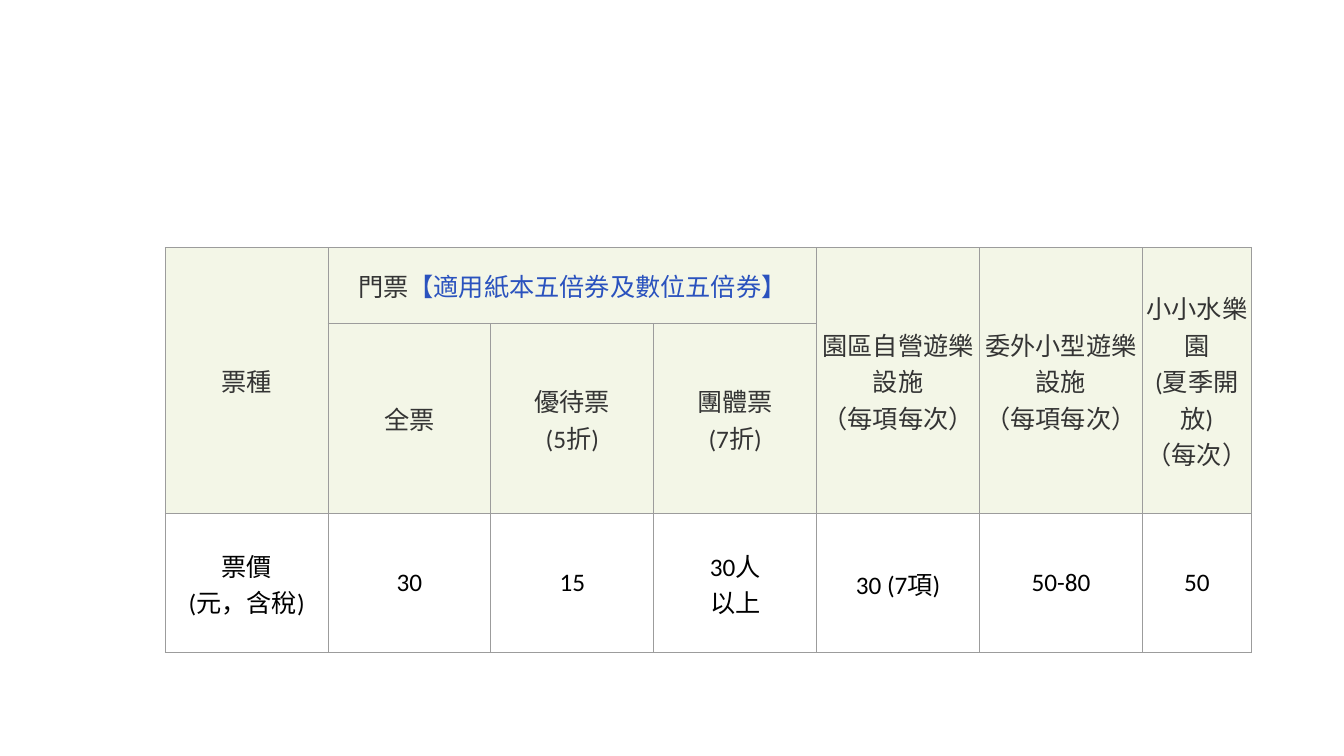
from lxml.etree import SubElement
from pptx import Presentation
from pptx.dml.color import RGBColor
from pptx.enum.text import MSO_ANCHOR, PP_ALIGN
from pptx.oxml.ns import qn
from pptx.util import Pt

FONT = "Calibri"
FONT_SIZE = 18
CELL_MARGIN = 2.25
BORDER_WIDTH = 0.75
BORDER_COLOR = "9C9C9C"
HEADER_FILL, HEADER_TEXT = "F3F6E7", "343434"
PRICE_FILL, PRICE_TEXT = "FFFFFF", "000000"
VOUCHER_TEXT = "2A52BE"

COLUMN_WIDTHS = [116.35] * 6 + [77.7]
ROW_HEIGHTS = [54.4, 135.6, 99.3]
HEADER_ROWS = 2

# None marks a cell covered by a merged neighbour; \v is a line break.
TICKET_ROWS = [
    ["票種", "門票", None, None, "園區自營遊樂設施\v（每項每次）",
     "委外小型遊樂設施\v（每項每次）", "小小水樂園\v(夏季開放)\v（每次）"],
    [None, "全票", "優待票\v(5折)", "團體票\v(7折)", None, None, None],
    ["票價\v(元，含稅)", "30", "15", "30人\v以上", "30 (7項)", "50-80", "50"],
]
VOUCHER_NOTE = "【適用紙本五倍券及數位五倍券】"


def color(hex_string):
    return RGBColor.from_string(hex_string)


def format_run(run, text_color):
    run.font.name = FONT
    run.font.size = Pt(FONT_SIZE)
    run.font.color.rgb = color(text_color)


def add_borders(cell):
    properties = cell._tc.get_or_add_tcPr()
    for side in ("a:lnL", "a:lnR", "a:lnT", "a:lnB"):
        line = SubElement(properties, qn(side), w=str(Pt(BORDER_WIDTH)))
        fill = SubElement(line, qn("a:solidFill"))
        SubElement(fill, qn("a:srgbClr"), val=BORDER_COLOR)


def style_cell(cell, fill_color):
    add_borders(cell)
    cell.fill.solid()
    cell.fill.fore_color.rgb = color(fill_color)
    cell.vertical_anchor = MSO_ANCHOR.MIDDLE
    cell.margin_left = cell.margin_right = Pt(CELL_MARGIN)
    cell.margin_top = cell.margin_bottom = Pt(CELL_MARGIN)


def write_cell(cell, text, text_color):
    paragraph = cell.text_frame.paragraphs[0]
    paragraph.text = text
    paragraph.alignment = PP_ALIGN.CENTER
    for run in paragraph.runs:
        format_run(run, text_color)


def add_price_table(slide, left, top):
    shape = slide.shapes.add_table(
        len(ROW_HEIGHTS), len(COLUMN_WIDTHS), Pt(left), Pt(top),
        Pt(sum(COLUMN_WIDTHS)), Pt(sum(ROW_HEIGHTS)))
    table = shape.table
    for column, width in zip(table.columns, COLUMN_WIDTHS):
        column.width = Pt(width)
    for row, height in zip(table.rows, ROW_HEIGHTS):
        row.height = Pt(height)

    for row_index, texts in enumerate(TICKET_ROWS):
        is_header = row_index < HEADER_ROWS
        fill_color = HEADER_FILL if is_header else PRICE_FILL
        text_color = HEADER_TEXT if is_header else PRICE_TEXT
        for column_index, text in enumerate(texts):
            cell = table.cell(row_index, column_index)
            style_cell(cell, fill_color)
            if text is not None:
                write_cell(cell, text, text_color)

    admission = table.cell(0, 1)
    note = admission.text_frame.paragraphs[0].add_run()
    note.text = VOUCHER_NOTE
    format_run(note, VOUCHER_TEXT)
    admission.merge(table.cell(0, 3))
    for column_index in (0, 4, 5, 6):
        table.cell(0, column_index).merge(table.cell(1, column_index))


def main():
    presentation = Presentation()
    presentation.slide_width = Pt(960)
    presentation.slide_height = Pt(540)
    slide = presentation.slides.add_slide(presentation.slide_layouts[6])
    add_price_table(slide, left=118, top=177)
    presentation.save("out.pptx")


if __name__ == "__main__":
    main()
